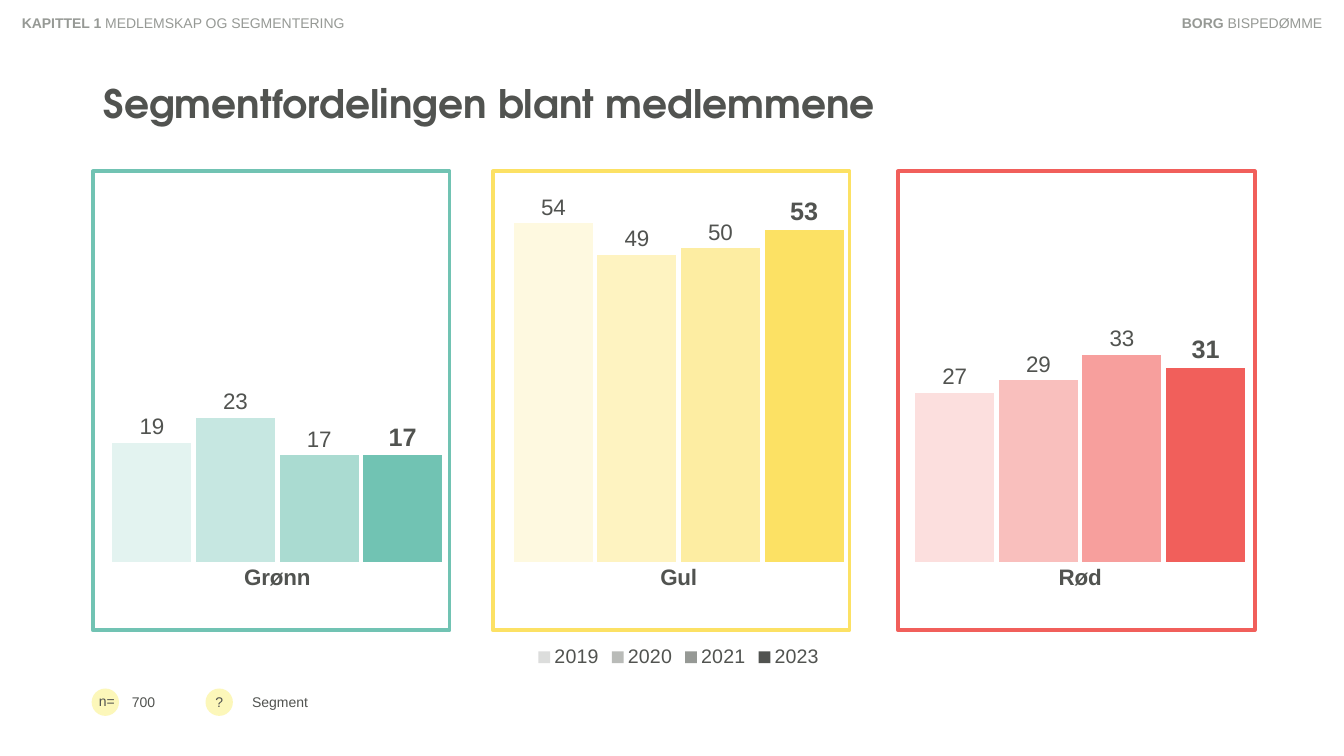
from lxml.etree import SubElement
from pptx import Presentation
from pptx.chart.data import CategoryChartData
from pptx.dml.color import RGBColor
from pptx.enum.chart import XL_CHART_TYPE, XL_LABEL_POSITION, XL_LEGEND_POSITION, XL_TICK_MARK
from pptx.enum.shapes import MSO_SHAPE
from pptx.enum.text import MSO_ANCHOR, MSO_AUTO_SIZE, PP_ALIGN
from pptx.oxml.ns import qn
from pptx.util import Cm, Pt

COLORS = {
    "ink": "515350", "muted": "969995", "badge": "FCF7BA",
    "green": "71C3B3", "yellow": "FCE164", "red": "F15F5B",
}
SEGMENTS = ["Grønn", "Gul", "Rød"]
YEARS = {
    "2019": ([19, 54, 27], "DCDDDC", ["E3F3F0", "FEF9E0", "FCDFDE"]),
    "2020": ([23, 49, 29], "B9BBB8", ["C6E7E1", "FEF3C1", "F9BFBD"]),
    "2021": ([17, 50, 33], COLORS["muted"], ["AADBD1", "FDEDA2", "F79F9D"]),
    "2023": ([17, 53, 31], COLORS["ink"],
             [COLORS["green"], COLORS["yellow"], COLORS["red"]]),
}
CURRENT_YEAR = "2023"
PLOT_AREA = {"x": 0, "y": 0.1, "w": 1, "h": 0.68}


def assign(target, formats):
    for attribute, setting in formats.items():
        setattr(target, attribute, setting)


def paint(fill, color):
    fill.solid()
    fill.fore_color.rgb = RGBColor.from_string(color)


class SegmentSlide:
    font_name = "Arial"
    heading_font = "TeX Gyre Adventor"

    def __init__(self, presentation):
        self.slide = presentation.slides.add_slide(presentation.slide_layouts[4])
        self.shapes = self.slide.shapes

    def style(self, font, size, bold=False, color=COLORS["ink"], name=None):
        assign(font, {"name": name or self.font_name, "size": Pt(size), "bold": bold})
        font.color.rgb = RGBColor.from_string(color)

    def place(self, shape, box):
        assign(shape, dict(zip(("left", "top", "width", "height"), map(Cm, box))))

    def placeholder(self, index, wording, box, anchor, size=10, bold=False, name=None):
        holder = self.slide.placeholders[index]
        self.place(holder, box)
        assign(holder.text_frame, {
            "text": wording, "word_wrap": True,
            "auto_size": MSO_AUTO_SIZE.NONE, "vertical_anchor": anchor,
        })
        paragraph = holder.text_frame.paragraphs[0]
        assign(paragraph, {"alignment": PP_ALIGN.LEFT, "space_before": Pt(0),
                           "line_spacing": 0.9 if index == 0 else 1.0})
        self.style(paragraph.runs[0].font, size, bold, name=name)

    def remove_placeholders(self, *indices):
        for index in indices:
            unused = self.slide.placeholders[index].element
            unused.getparent().remove(unused)

    def label(self, box, *parts, align=PP_ALIGN.LEFT, color=COLORS["ink"]):
        frame = self.shapes.add_textbox(*map(Cm, box)).text_frame
        assign(frame, {"word_wrap": True, "auto_size": MSO_AUTO_SIZE.SHAPE_TO_FIT_TEXT})
        paragraph = frame.paragraphs[0]
        paragraph.alignment = align
        for wording, bold in parts:
            run = paragraph.add_run()
            run.text = wording
            self.style(run.font, 10, bold, color)

    def badge(self, left, top, diameter):
        circle = self.shapes.add_shape(
            MSO_SHAPE.OVAL, *map(Cm, (left, top, diameter, diameter)))
        circle.shadow.inherit = False
        paint(circle.fill, COLORS["badge"])
        circle.line.fill.background()

    def frame(self, box, color):
        border = self.shapes.add_shape(MSO_SHAPE.RECTANGLE, *map(Cm, box))
        border.shadow.inherit = False
        border.fill.background()
        paint(border.line.fill, color)
        border.line.width = Pt(2.75)

    def column_chart(self, box):
        figures = CategoryChartData(number_format="0")
        figures.categories = SEGMENTS
        for year, (shares, _, _) in YEARS.items():
            figures.add_series(year, shares)
        chart = self.shapes.add_chart(
            XL_CHART_TYPE.COLUMN_CLUSTERED, *map(Cm, box), figures).chart
        self.style(chart.font, 18)
        assign(chart, {"has_title": False, "has_legend": True})
        assign(chart.legend, {"position": XL_LEGEND_POSITION.BOTTOM,
                              "include_in_layout": False})
        self.style(chart.legend.font, 14)
        assign(chart.value_axis, {
            "visible": False, "has_major_gridlines": False,
            "minimum_scale": 0, "maximum_scale": 54.3,
        })
        segment_axis = chart.category_axis
        assign(segment_axis, {"major_tick_mark": XL_TICK_MARK.NONE,
                              "minor_tick_mark": XL_TICK_MARK.NONE})
        segment_axis.format.line.fill.background()
        self.style(segment_axis.tick_labels.font, 16, True)
        plot = chart.plots[0]
        assign(plot, {"gap_width": 91, "overlap": -6, "vary_by_categories": False})
        for series in plot.series:
            self.color_year(series)
        self.fix_plot_area(chart)

    def color_year(self, series):
        _, legend_color, segment_colors = YEARS[series.name]
        paint(series.format.fill, legend_color)
        for position, color in enumerate(segment_colors):
            paint(series.points[position].format.fill, color)
        assign(series.data_labels, {
            "show_value": True, "number_format": "0", "number_format_is_linked": False,
            "position": XL_LABEL_POSITION.OUTSIDE_END,
        })
        current = series.name == CURRENT_YEAR
        self.style(series.data_labels.font, 18 if current else 16, current)

    def fix_plot_area(self, chart):
        plot_area = chart.element.find(".//" + qn("c:plotArea"))
        layout = plot_area.find(qn("c:layout"))
        if layout is None:
            layout = plot_area.makeelement(qn("c:layout"))
            plot_area.insert(0, layout)
        manual = SubElement(layout, qn("c:manualLayout"))
        settings = {"layoutTarget": "inner", "xMode": "edge", "yMode": "edge", **PLOT_AREA}
        for tag, setting in settings.items():
            SubElement(manual, qn(f"c:{tag}")).set("val", str(setting))


def main():
    presentation = Presentation()
    assign(presentation, {"slide_width": Cm(33.87), "slide_height": Cm(19.05)})
    page = SegmentSlide(presentation)

    page.placeholder(0, "Segmentfordelingen blant medlemmene", (2.36, 0.99, 29.26, 2.34),
                     MSO_ANCHOR.BOTTOM, 28, True, page.heading_font)
    page.placeholder(1, "700", (3.07, 17.35, 1.88, 0.69), MSO_ANCHOR.MIDDLE)
    page.placeholder(3, "Segment", (6.1, 16.94, 25.53, 1.47), MSO_ANCHOR.MIDDLE)
    page.remove_placeholders(2, 4)

    for left in (2.31, 5.18):
        page.badge(left, 17.35, 0.69)
    page.label((2.24, 17.32, 1.14, 0.69), ("n=", False))
    page.label((5.18, 17.35, 0.64, 0.69), ("?", False))

    page.column_chart((1.93, 4.32, 30.35, 12.62))
    for left, segment in ((2.34, "green"), (12.42, "yellow"), (22.63, "red")):
        page.frame((left, 4.32, 8.99, 11.56), COLORS[segment])

    page.label((0.3, 0.25, 14.33, 0.69), ("KAPITTEL 1 ", True),
               ("MEDLEMSKAP OG SEGMENTERING", False), color=COLORS["muted"])
    page.label((28.24, 0.25, 5.33, 0.69), ("BORG ", True), ("BISPEDØMME", False),
               align=PP_ALIGN.RIGHT, color=COLORS["muted"])
    presentation.save("out.pptx")


if __name__ == "__main__":
    main()
